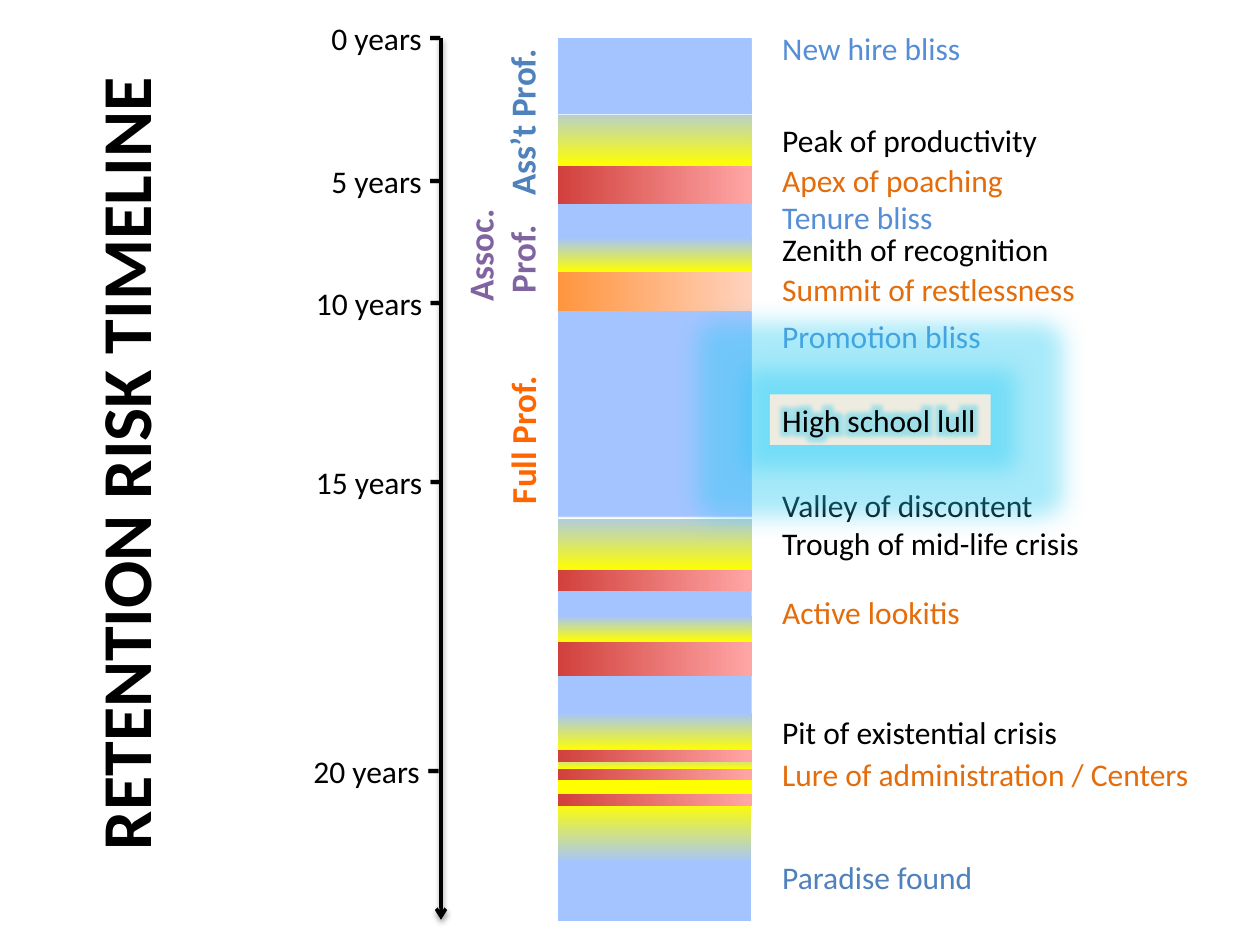
from dataclasses import dataclass

from lxml.etree import SubElement
from pptx import Presentation
from pptx.dml.color import RGBColor
from pptx.enum.shapes import MSO_CONNECTOR, MSO_SHAPE
from pptx.enum.text import MSO_ANCHOR, MSO_AUTO_SIZE as AutoSize, PP_ALIGN
from pptx.oxml.ns import qn
from pptx.util import Cm, Pt


@dataclass(frozen=True)
class Theme:
    """Colours, gradients and type sizes of the slide."""
    font: str = "Calibri"
    title: int = 40
    rank: int = 20
    label: int = 18
    tick: int = 24
    black: str = "000000"
    bliss: str = "558ED5"
    blue: str = "4F81BD"
    purple: str = "8064A2"
    orange: str = "FF6600"
    risk: str = "E46C0A"
    panel: str = "EEECE1"
    glow: str = "26CBF3"
    calm: tuple = ((0.99, "A4C4FF"), (1, "FFFFFF"))
    rising: tuple = ((0.49, "A4C4FF"), (1, "FFFF00"))
    late: tuple = ((0.77, "A4C4FF"), (1, "FFFF00"))
    early: tuple = ((0, "A4C4FF"), (0.37, "FFFF00"))
    danger: tuple = ((0, "D1403C"), (1, "FFA6A5"))
    restless: tuple = ((0, "FF953E"), (1, "FFD2BD"))


THEME = Theme()


@dataclass(frozen=True)
class Box:
    """A rectangle in centimetres."""
    left: float
    top: float
    width: float
    height: float

    def lengths(self):
        """Return the four sides as slide lengths."""
        return [Cm(side) for side in (self.left, self.top, self.width, self.height)]


def centred(x, y, width, height):
    """Return the box of a given size around a centre."""
    return Box(x - width / 2, y - height / 2, width, height)


def add_effect(effects, name, color, alpha, **attributes):
    """Add a coloured effect to an effect list."""
    effect = SubElement(effects, qn(f"a:{name}"), attributes)
    tint = SubElement(effect, qn("a:srgbClr"), val=color)
    SubElement(tint, qn("a:alpha"), val=str(alpha * 1000))


def write(paragraph, text, size=THEME.label, color=THEME.black, bold=False):
    """Append a formatted run to a paragraph."""
    run = paragraph.add_run()
    run.text = text
    run.font.name = THEME.font
    run.font.size = Pt(size)
    run.font.bold = bold
    run.font.color.rgb = RGBColor.from_string(color)
    return run


def set_text(shape, text, wrap=False, **text_format):
    """Fill a shape with left-aligned lines of text and return the last run."""
    frame = shape.text_frame
    frame.word_wrap = wrap
    frame.auto_size = AutoSize.SHAPE_TO_FIT_TEXT
    frame.vertical_anchor = MSO_ANCHOR.TOP
    for index, line in enumerate(text.split("\n")):
        paragraph = frame.add_paragraph() if index else frame.paragraphs[0]
        paragraph.alignment = PP_ALIGN.LEFT
        run = write(paragraph, line, **text_format)
    return run


def add_title(slide, box):
    """Turn the title upright along the centre of its box."""
    title = slide.shapes.title
    upright = centred(box.left + box.width / 2, box.top + box.height / 2, box.height, box.width)
    title.left, title.top, title.width, title.height = upright.lengths()
    title.rotation = 270
    set_text(title, "RETENTION RISK TIMELINE", size=THEME.title, bold=True)


def add_axis(slide, box):
    """Draw the time arrow on the right side of the box, with its ticks."""
    x = box.left + box.width
    ends = Cm(x), Cm(box.top + 0.76), Cm(x), Cm(box.top + 18.54)
    arrow = slide.shapes.add_connector(MSO_CONNECTOR.STRAIGHT, *ends)
    arrow.line.width = Pt(2)
    arrow.line.color.rgb = RGBColor.from_string(THEME.black)
    SubElement(arrow.line._get_or_add_ln(), qn("a:tailEnd"), type="arrow")
    effects = SubElement(arrow._element.spPr, qn("a:effectLst"))
    add_effect(effects, "outerShdw", THEME.black, 38, blurRad=str(Pt(3.1)),
               dist=str(Pt(1.6)), dir="5400000", rotWithShape="0")
    ticks = [(0, 0.05, 2.77, 0.31), (5, 2.92, 2.77, 0.31), (10, 5.38, 3.1, 0.33),
             (15, 8.99, 3.1, 0.33), (20, 14.83, 3.1, 0.28)]
    for years, top, width, overhang in ticks:
        place = Box(x + overhang - width, box.top + top, width, 1.27)
        tick = slide.shapes.add_textbox(*place.lengths())
        set_text(tick, f"{years} years ")
        write(tick.text_frame.paragraphs[0], "-", size=THEME.tick, bold=True)


def add_ranks(slide, box):
    """Write the academic ranks upward beside the bands."""
    ranks = [("Ass’t Prof.", 1.64, 2.41, 3.58, 1.12, THEME.blue, False),
             ("Assoc.\n Prof.", 1.21, 5.12, 2.41, 1.96, THEME.purple, False),
             ("Full Prof.", 1.65, 8.48, 3.86, 1.12, THEME.orange, True)]
    for text, x, y, length, depth, color, wrap in ranks:
        place = centred(box.left + x, box.top + y, length, depth)
        rank = slide.shapes.add_textbox(*place.lengths())
        rank.rotation = 270
        set_text(rank, text, wrap=wrap, size=THEME.rank, color=color, bold=True)


def add_bands(slide, box):
    """Stack the mood bands, each given by its centre, height and gradient."""
    bands = [(17.37, 2.39, THEME.rising), (3.71, 0.79, THEME.danger),
             (8.89, 5.21, THEME.late), (11.71, 0.43, THEME.danger),
             (12.42, 1.02, THEME.rising), (13.28, 0.69, THEME.danger),
             (14.38, 1.5, THEME.rising), (15.6, 0.81, THEME.early),
             (15.24, 0.23, THEME.danger), (15.62, 0.23, THEME.danger),
             (16.13, 0.23, THEME.danger), (5.87, 0.79, THEME.restless),
             (2.06, 2.54, THEME.rising), (1.54, 1.55, THEME.calm),
             (4.5, 0.76, THEME.calm), (4.8, 1.37, THEME.rising),
             (8.36, 4.17, THEME.calm)]
    for index, (y, height, gradient) in enumerate(bands):
        place = centred(box.left + box.width / 2, box.top + y, height, box.width)
        band = slide.shapes.add_shape(MSO_SHAPE.RECTANGLE, *place.lengths())
        band.rotation = 90 if index else 270
        band.shadow.inherit = False
        band.line.fill.background()
        band.fill.gradient()
        band.fill.gradient_angle = 90 if gradient in (THEME.danger, THEME.restless) else 0
        for stop, (position, color) in zip(band.fill.gradient_stops, gradient):
            stop.position = position
            stop.color.rgb = RGBColor.from_string(color)


def add_highlight(slide, box, text):
    """Place a glowing panel with glowing text."""
    panel = slide.shapes.add_shape(MSO_SHAPE.RECTANGLE, *box.lengths())
    panel.shadow.inherit = False
    panel.fill.solid()
    panel.fill.fore_color.rgb = RGBColor.from_string(THEME.panel)
    panel.line.fill.background()
    run = set_text(panel, text)
    effects = panel._element.spPr.find(qn("a:effectLst"))
    add_effect(effects, "glow", THEME.glow, 40, rad=str(Pt(28)))
    properties = run.font._element
    text_effects = SubElement(properties, qn("a:effectLst"))
    properties.find(qn("a:solidFill")).addnext(text_effects)
    add_effect(text_effects, "glow", THEME.glow, 40, rad=str(Pt(18)))


def add_labels(slide, box):
    """Name the career stages down the box."""
    labels = [("New hire bliss", 0.46, 4.17, THEME.bliss),
              ("Peak of productivity", 2.31, 5.74, THEME.black),
              ("Apex of poaching", 3.12, 5.03, THEME.risk),
              ("Tenure bliss", 3.86, 3.66, THEME.bliss),
              ("Zenith of recognition", 4.52, 5.97, THEME.black),
              ("Summit of restlessness", 5.31, 6.5, THEME.risk),
              ("Promotion bliss", 6.27, 4.57, THEME.bliss),
              ("Valley of discontent\nTrough of mid-life crisis", 9.68, 6.63, THEME.black),
              ("Active lookitis", 11.84, 4.14, THEME.risk),
              ("Pit of existential crisis", 14.25, 6.15, THEME.black),
              ("Lure of administration / Centers", 15.09, 8.84, THEME.risk),
              ("Paradise found", 17.17, 4.42, THEME.blue)]
    for text, top, width, color in labels:
        height = 1.8 if "\n" in text else 1.02
        place = Box(box.left, box.top + top, width, height)
        set_text(slide.shapes.add_textbox(*place.lengths()), text, color=color)
    add_highlight(slide, Box(box.left, box.top + 7.95, 4.45, 1.02), "High school lull")


def main():
    """Build the timeline slide and save it."""
    presentation = Presentation()
    presentation.slide_width, presentation.slide_height = Cm(25.4), Cm(19.05)
    slide = presentation.slides.add_slide(presentation.slide_layouts[5])
    add_title(slide, Box(1.51, 1.13, 1.96, 16.26))
    add_bands(slide, Box(11.24, 0, 3.91, 19.05))
    add_axis(slide, Box(6.07, 0, 2.82, 19.05))
    add_ranks(slide, Box(8.89, 0, 2.35, 19.05))
    add_labels(slide, Box(15.52, 0, 8.84, 19.05))
    presentation.save("out.pptx")


if __name__ == "__main__":
    main()
